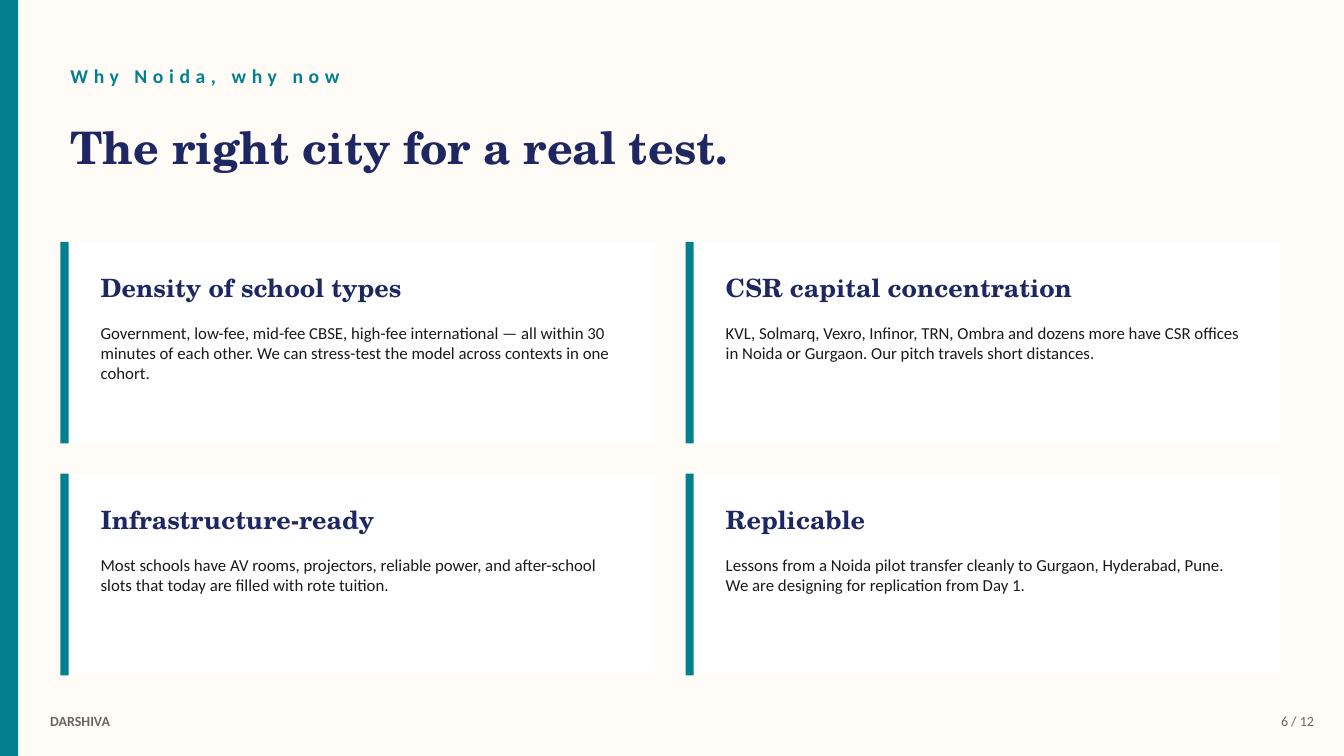
from dataclasses import dataclass

from pptx import Presentation
from pptx.dml.color import RGBColor
from pptx.enum import shapes, text as txt
from pptx.slide import Slide
from pptx.util import Inches, Pt

COLORS = {
    "paper": "FFFCF7",
    "teal": "028090",
    "navy": "1E2761",
    "white": "FFFFFF",
    "ink": "1A1A1A",
    "gray": "666666",
}
SERIF = "TeX Gyre Schola"
SANS = "Calibri"
WIDTH, HEIGHT = 13.33, 7.5
LEFT, TOP = 0.6, 2.4
CARD_W, CARD_H, GAP = 5.9, 2, 0.3


@dataclass(frozen=True)
class Card:
    title: str
    body: str


CARDS = [
    Card(
        "Density of school types",
        "Government, low-fee, mid-fee CBSE, high-fee international — all within 30 "
        "minutes of each other. We can stress-test the model across contexts in one cohort.",
    ),
    Card(
        "CSR capital concentration",
        "KVL, Solmarq, Vexro, Infinor, TRN, Ombra and dozens more have CSR offices "
        "in Noida or Gurgaon. Our pitch travels short distances.",
    ),
    Card(
        "Infrastructure-ready",
        "Most schools have AV rooms, projectors, reliable power, and after-school "
        "slots that today are filled with rote tuition.",
    ),
    Card(
        "Replicable",
        "Lessons from a Noida pilot transfer cleanly to Gurgaon, Hyderabad, Pune. "
        "We are designing for replication from Day 1.",
    ),
]


def color(name: str) -> RGBColor:
    return RGBColor.from_string(COLORS[name])


def add_rect(slide: Slide, x: float, y: float, w: float, h: float, fill: str) -> None:
    rect = slide.shapes.add_shape(
        shapes.MSO_SHAPE.RECTANGLE, Inches(x), Inches(y), Inches(w), Inches(h)
    )
    rect.shadow.inherit = False
    rect.fill.solid()
    rect.fill.fore_color.rgb = color(fill)
    rect.line.fill.background()


def add_text(
    slide: Slide, words: str, x: float, y: float, w: float, h: float, *,
    size: float, ink: str, face: str = SANS, bold: bool = False,
    middle: bool = True, right: bool = False, track: float = 0,
) -> None:
    """Add a one-paragraph text box; track is the letter spacing in points."""
    box = slide.shapes.add_textbox(Inches(x), Inches(y), Inches(w), Inches(h))
    frame = box.text_frame
    frame.word_wrap = True
    frame.vertical_anchor = txt.MSO_ANCHOR.MIDDLE if middle else txt.MSO_ANCHOR.TOP
    para = frame.paragraphs[0]
    para.alignment = txt.PP_ALIGN.RIGHT if right else txt.PP_ALIGN.LEFT
    run = para.add_run()
    run.text = words
    font = run.font
    font.name, font.size, font.bold = face, Pt(size), bold
    font.color.rgb = color(ink)
    if track:
        run._r.get_or_add_rPr().set("spc", str(round(track * 100)))


def add_card(slide: Slide, card: Card, x: float, y: float) -> None:
    add_rect(slide, x, y, CARD_W, CARD_H, "white")
    add_rect(slide, x, y, 0.08, CARD_H, "teal")
    add_text(slide, card.title, x + 0.3, y + 0.2, 5.4, 0.5,
             size=18, ink="navy", face=SERIF, bold=True)
    add_text(slide, card.body, x + 0.3, y + 0.75, 5.4, 1.2,
             size=12, ink="ink", middle=False)


def main() -> None:
    deck = Presentation()
    deck.slide_width, deck.slide_height = Inches(WIDTH), Inches(HEIGHT)
    slide = deck.slides.add_slide(deck.slide_layouts[6])
    slide.background.fill.solid()
    slide.background.fill.fore_color.rgb = color("paper")

    add_rect(slide, 0, 0, 0.18, HEIGHT, "teal")
    add_text(slide, "Why Noida, why now", LEFT, 0.5, 8, 0.5,
             size=14, ink="teal", bold=True, track=4)
    add_text(slide, "The right city for a real test.", LEFT, 1, 12, 0.9,
             size=32, ink="navy", face=SERIF, bold=True)

    for i, card in enumerate(CARDS):
        row, col = divmod(i, 2)
        add_card(slide, card, LEFT + col * (CARD_W + GAP), TOP + row * (CARD_H + GAP))

    add_text(slide, "6 / 12", WIDTH - 1.2, 7, 1, 0.3, size=10, ink="gray", right=True)
    add_text(slide, "DARSHIVA", 0.4, 7, 2, 0.3, size=10, ink="gray", bold=True)
    deck.save("out.pptx")


if __name__ == "__main__":
    main()
